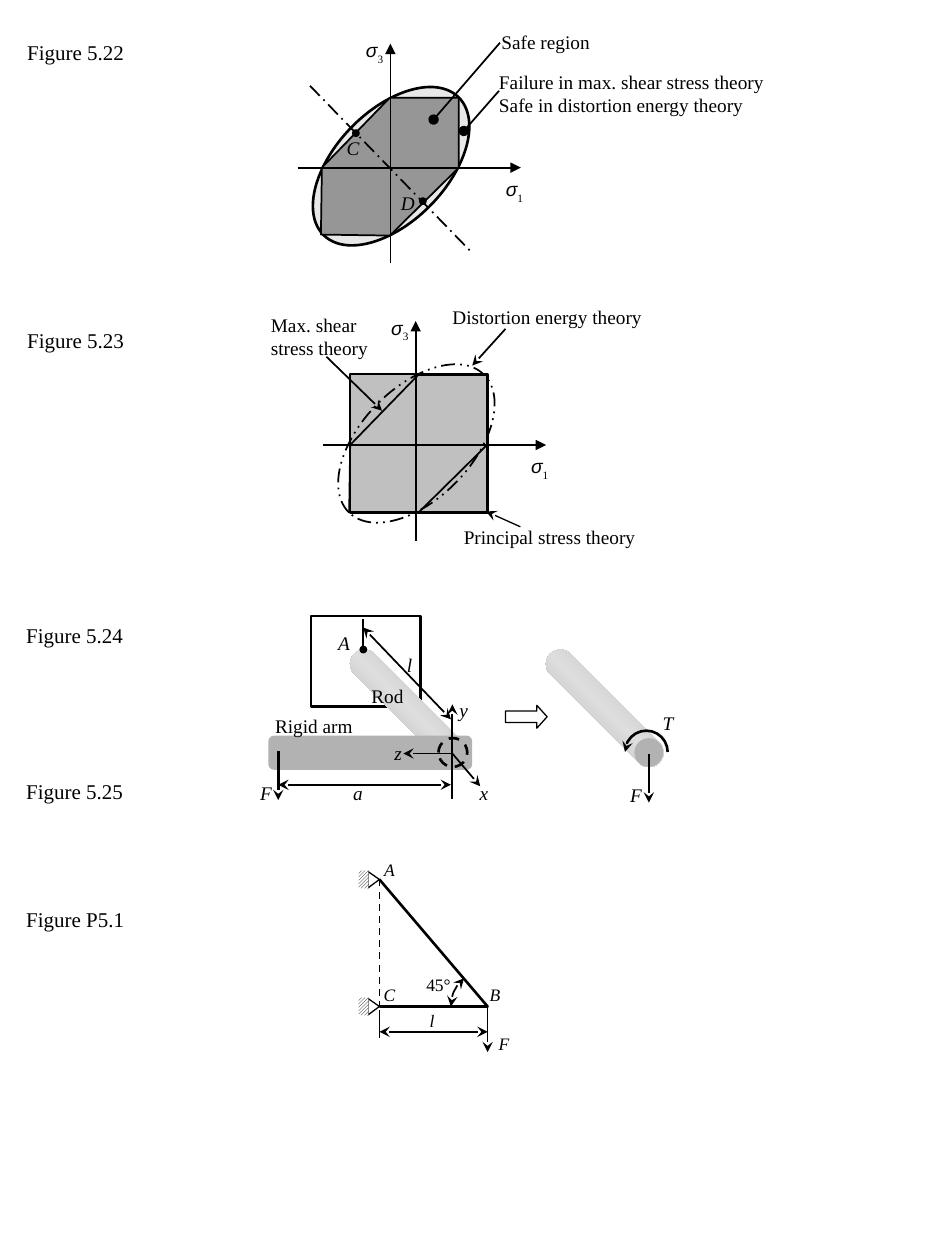
from copy import deepcopy
from dataclasses import dataclass

from lxml.etree import SubElement
from pptx import Presentation
from pptx.dml.color import RGBColor as Rgb
from pptx.enum.dml import MSO_LINE as Dash, MSO_PATTERN as Pattern
from pptx.enum.shapes import MSO_CONNECTOR as Connector, MSO_SHAPE as Preset
from pptx.enum.text import MSO_AUTO_SIZE as AutoSize, PP_ALIGN as Align
from pptx.oxml.ns import qn
from pptx.util import Cm, Pt


@dataclass(frozen=True)
class Theme:
    ink: str = "000000"
    paper: str = "FFFFFF"
    pale: str = "E8E8E8"
    dark: str = "969696"
    square: str = "C0C0C0"
    steel: str = "B2B2B2"
    rod: tuple = ("969696", "DEDEDE", "A6A6A6")
    serif: str = "Times New Roman"
    sans: str = "Arial"
    caption: int = 12
    label: int = 11
    small: int = 10
    fine: float = 0.75
    thin: float = 1
    bold: float = 1.5


class FigureSheet:
    """Draws mechanics figures on one slide in a single style."""

    def __init__(self, slide, theme):
        self.slide, self.theme = slide, theme
        self.shapes = slide.shapes

    def start_figure(self):
        self.shapes = self.slide.shapes.add_group_shape().shapes

    def outline(self, shape, width, dash=None, head=None, tail=None):
        if not width:
            shape.line.fill.background()
            return
        shape.line.color.rgb = Rgb.from_string(self.theme.ink)
        shape.line.width = Pt(width)
        if dash:
            shape.line.dash_style = dash
        for tag, kind in (("a:headEnd", head), ("a:tailEnd", tail)):
            if kind:
                SubElement(shape.line._get_or_add_ln(), qn(tag), type=kind)

    def paint(self, shape, color):
        shape.shadow.inherit = False
        if color:
            shape.fill.solid()
            shape.fill.fore_color.rgb = Rgb.from_string(color)
        else:
            shape.fill.background()

    def shape(self, preset, box, fill=None, width=None, rotation=0, adjust=(), **ends):
        shape = self.shapes.add_shape(preset, *map(Cm, box))
        for index, value in enumerate(adjust):
            shape.adjustments[index] = value
        shape.rotation = rotation
        self.paint(shape, fill)
        self.outline(shape, width, **ends)
        return shape

    def polygon(self, points, fill=None, width=1, close=True):
        start, *others = [(Cm(x), Cm(y)) for x, y in points]
        builder = self.shapes.build_freeform(*start)
        builder.add_line_segments(others, close=close)
        shape = builder.convert_to_shape()
        self.paint(shape, fill)
        self.outline(shape, width)

    def line(self, start, end, width=1, **ends):
        line = self.shapes.add_connector(Connector.STRAIGHT, *map(Cm, (*start, *end)))
        self.outline(line, width, **ends)
        SubElement(line._element.spPr, qn("a:effectLst"))

    def arc(self, center, radius, start, end, width, **ends):
        box = (center[0] - radius, center[1] - radius, 2 * radius, 2 * radius)
        self.shape(Preset.ARC, box, width=width, adjust=(start * 0.6, end * 0.6), **ends)

    def dot(self, x, y):
        self.shape(Preset.OVAL, (x, y, 0.13, 0.13), self.theme.ink, self.theme.fine)

    def frame(self, box):
        frame = self.shapes.add_textbox(*map(Cm, box)).text_frame
        frame.word_wrap = True
        frame.margin_left = frame.margin_right = frame.margin_top = frame.margin_bottom = 0
        return frame

    def style(self, font, size, italic=False, name=None):
        font.name, font.size, font.italic = name or self.theme.serif, Pt(size), italic
        font.color.rgb = Rgb.from_string(self.theme.ink)

    def text(self, box, *lines, size=None, italic=False, align=Align.CENTER):
        frame = self.frame(box)
        for index, line in enumerate(lines):
            paragraph = frame.add_paragraph() if index else frame.paragraphs[0]
            paragraph.text, paragraph.alignment = line, align
            self.style(paragraph.font, size or self.theme.label, italic)

    def letter(self, letter, x, y, box=(0.41, 0.43), size=None):
        self.text((x, y, *box), letter, size=size, italic=True)

    def caption(self, text, left, top):
        frame = self.frame((left, top, 2.49, 0.76))
        frame.margin_left = frame.margin_right = Cm(0.25)
        frame.margin_top = frame.margin_bottom = Cm(0.13)
        frame.word_wrap, frame.auto_size = False, AutoSize.SHAPE_TO_FIT_TEXT
        paragraph = frame.paragraphs[0]
        paragraph.text = text
        self.style(paragraph.font, self.theme.caption)

    def sigma(self, index, x, y):
        paragraph = self.frame((x, y, 0.48, 0.53)).paragraphs[0]
        paragraph.alignment = Align.CENTER
        symbol, subscript = paragraph.add_run(), paragraph.add_run()
        symbol.text, subscript.text = "σ", index
        self.style(symbol.font, self.theme.label, True, self.theme.sans)
        self.style(subscript.font, self.theme.label)
        subscript._r.get_or_add_rPr().set("baseline", "-30000")

    def stress_axes(self, x, y):
        self.line((x - 1.87, y), (x + 2.63, y), tail="triangle")
        self.line((x, y + 1.93), (x, y - 2.5), tail="triangle")
        self.sigma("1", x + 2.26, y + 0.19)
        self.sigma("3", x - 0.56, y - 2.6)

    def energy_ellipse(self, x, y, **style):
        self.shape(Preset.OVAL, (x - 1.93, y - 1.15, 3.89, 2.24), rotation=314.3, **style)

    def shear_hexagon(self, x, y, fill=None):
        corners = ((-1.37, 0), (0, -1.41), (1.39, -1.41), (1.39, 0), (0, 1.37), (-1.39, 1.35))
        self.polygon([(x + dx, y + dy) for dx, dy in corners], fill)

    def rod(self, x, y, diameter=0.58, length=3.11, reach=0.89):
        box = (x - reach - length / 2, y - reach - diameter / 2, length, diameter)
        shape = self.shape(Preset.ROUNDED_RECTANGLE, box, rotation=45, adjust=(0.5,))
        shape.fill.gradient()
        shape.fill.gradient_angle = 90
        stop_list = shape._element.spPr.find(qn("a:gradFill")).find(qn("a:gsLst"))
        stop_list.insert(1, deepcopy(stop_list[0]))
        for stop, place, color in zip(shape.fill.gradient_stops, (0, 0.5, 1), self.theme.rod):
            stop.position, stop.color.rgb = place, Rgb.from_string(color)
        face = (x - diameter / 2, y - diameter / 2, diameter, diameter)
        self.shape(Preset.OVAL, face, self.theme.steel)

    def support(self, x, y):
        corners = ((x - 0.23, y - 0.16), (x, y), (x - 0.23, y + 0.17))
        self.polygon(corners, self.theme.paper, self.theme.fine)
        wall = self.shape(Preset.RECTANGLE, (x - 0.42, y - 0.18, 0.2, 0.36))
        wall.fill.patterned()
        wall.fill.pattern = Pattern.DARK_UPWARD_DIAGONAL
        wall.fill.fore_color.rgb = Rgb.from_string(self.theme.ink)
        wall.fill.back_color.rgb = Rgb.from_string(self.theme.paper)


def draw_safe_region(sheet, theme):
    sheet.start_figure()
    sheet.energy_ellipse(7.87, 3.38, fill=theme.pale, width=theme.bold)
    sheet.shear_hexagon(7.86, 3.38, theme.dark)
    sheet.stress_axes(7.87, 3.38)
    sheet.line((6.25, 1.73), (9.5, 5.08), dash=Dash.LONG_DASH_DOT)
    sheet.dot(7.11, 2.62)
    sheet.dot(8.46, 3.99)
    sheet.letter("D", 7.98, 3.86, (0.48, 0.53))
    sheet.letter("C", 6.88, 2.74, (0.48, 0.53))
    sheet.text((10.01, 0.61, 1.98, 0.53), "Safe region")
    sheet.text((10.06, 1.42, 5.38, 0.94), "Failure in max. shear stress theory",
               "Safe in distortion energy theory", align=Align.LEFT)
    sheet.line((10.08, 0.86), (8.74, 2.41), tail="oval")
    sheet.line((10.06, 1.83), (9.35, 2.64), tail="oval")


def draw_theories(sheet, theme):
    sheet.start_figure()
    sheet.text((5.46, 6.32, 2.24, 0.91), "Max. shear\nstress theory", align=Align.LEFT)
    sheet.shape(Preset.RECTANGLE, (7.06, 7.54, 2.77, 2.79), theme.square, theme.bold)
    sheet.energy_ellipse(8.38, 8.97, width=theme.thin, dash=Dash.DASH_DOT_DOT)
    sheet.stress_axes(8.38, 8.97)
    sheet.text((9.12, 6.15, 3.84, 0.53), "Distortion energy theory", align=Align.LEFT)
    sheet.text((9.35, 10.59, 3.58, 0.53), "Principal stress theory", align=Align.LEFT)
    sheet.shear_hexagon(8.43, 8.97)
    sheet.line((10.19, 6.63), (9.52, 7.37), tail="stealth")
    sheet.line((10.49, 10.62), (9.8, 10.31), theme.fine, tail="stealth")
    sheet.line((6.58, 7.19), (7.7, 8.28), tail="stealth")


def draw_rod_and_arm(sheet, theme):
    sheet.start_figure()
    sheet.line((7.32, 13.46), (7.32, 12.47))
    sheet.shape(Preset.RECTANGLE, (6.27, 12.42, 2.21, 1.83), width=theme.bold)
    sheet.rod(9.13, 15.17)
    sheet.shape(Preset.FLOWCHART_ALTERNATE_PROCESS, (5.41, 14.83, 4.11, 0.69), theme.steel)
    sheet.shape(Preset.OVAL, (8.84, 14.88, 0.58, 0.58), width=theme.bold, dash=Dash.DASH)
    for tip in ((8.13, 15.19), (9.12, 14.2), (9.68, 15.85)):
        sheet.line((9.12, 15.19), tip, tail="stealth")
    sheet.line((5.61, 15.14), (5.61, 16.13), theme.bold, tail="stealth")
    sheet.line((9.12, 16.1), (9.12, 15.11))
    sheet.line((5.61, 15.82), (9.09, 15.82), head="stealth", tail="stealth")
    sheet.line((9.09, 14.5), (7.32, 12.65), head="stealth", tail="stealth")
    sheet.text((5.49, 14.4, 1.68, 0.43), "Rigid arm")
    sheet.text((7.39, 13.79, 0.84, 0.43), "Rod")
    sheet.dot(7.26, 13.03)
    sheet.rod(13.08, 15.17)
    sheet.line((13.08, 15.19), (13.08, 16.18), theme.bold, tail="stealth")
    sheet.arc((13.03, 15.16), 0.43, 180, 0, theme.bold, head="stealth")
    sheet.shape(Preset.RIGHT_ARROW, (10.19, 14.22, 0.84, 0.46), width=theme.fine,
                adjust=(0.5, 0.45))
    for letter, x, y in (("F", 5.16, 15.75), ("a", 7.01, 15.75), ("x", 9.55, 15.75),
                         ("z", 7.82, 14.94), ("y", 9.14, 14.07), ("l", 8.05, 13.16),
                         ("A", 6.73, 12.73), ("F", 12.62, 15.8), ("T", 13.26, 14.33)):
        sheet.letter(letter, x, y)


def draw_truss(sheet, theme):
    top, load, base = (7.65, 17.73), (9.83, 20.29), (7.65, 20.29)
    sheet.start_figure()
    sheet.polygon((top, load, base), width=theme.bold, close=False)
    sheet.line(top, base, dash=Dash.DASH)
    sheet.line(load, (9.83, 21.21), tail="stealth")
    sheet.line((7.65, 20.37), (7.65, 20.93))
    sheet.line((7.65, 20.8), (9.83, 20.8), head="stealth", tail="stealth")
    sheet.arc(load, 0.74, 180, 230, theme.thin, head="stealth", tail="stealth")
    sheet.text((8.51, 19.63, 0.66, 0.46), "45°", size=theme.small)
    for joint in (base, top):
        sheet.support(*joint)
    for letter, x, y in (("l", 8.48, 20.37), ("C", 7.62, 19.84), ("B", 9.75, 19.84),
                         ("A", 7.62, 17.32), ("F", 9.93, 20.83)):
        sheet.letter(letter, x, y, (0.46, 0.46), theme.small)


def main():
    presentation = Presentation()
    presentation.slide_width, presentation.slide_height = Cm(19.05), Cm(25.4)
    theme = Theme()
    sheet = FigureSheet(presentation.slides.add_slide(presentation.slide_layouts[6]), theme)
    for number, left, top in (("5.22", 0.3, 0.66), ("5.23", 0.3, 6.48), ("5.24", 0.28, 12.42),
                              ("5.25", 0.28, 15.57), ("P5.1", 0.28, 18.14)):
        sheet.caption(f"Figure {number}", left, top)
    for draw in (draw_safe_region, draw_theories, draw_rod_and_arm, draw_truss):
        draw(sheet, theme)
    presentation.save("out.pptx")


if __name__ == "__main__":
    main()
